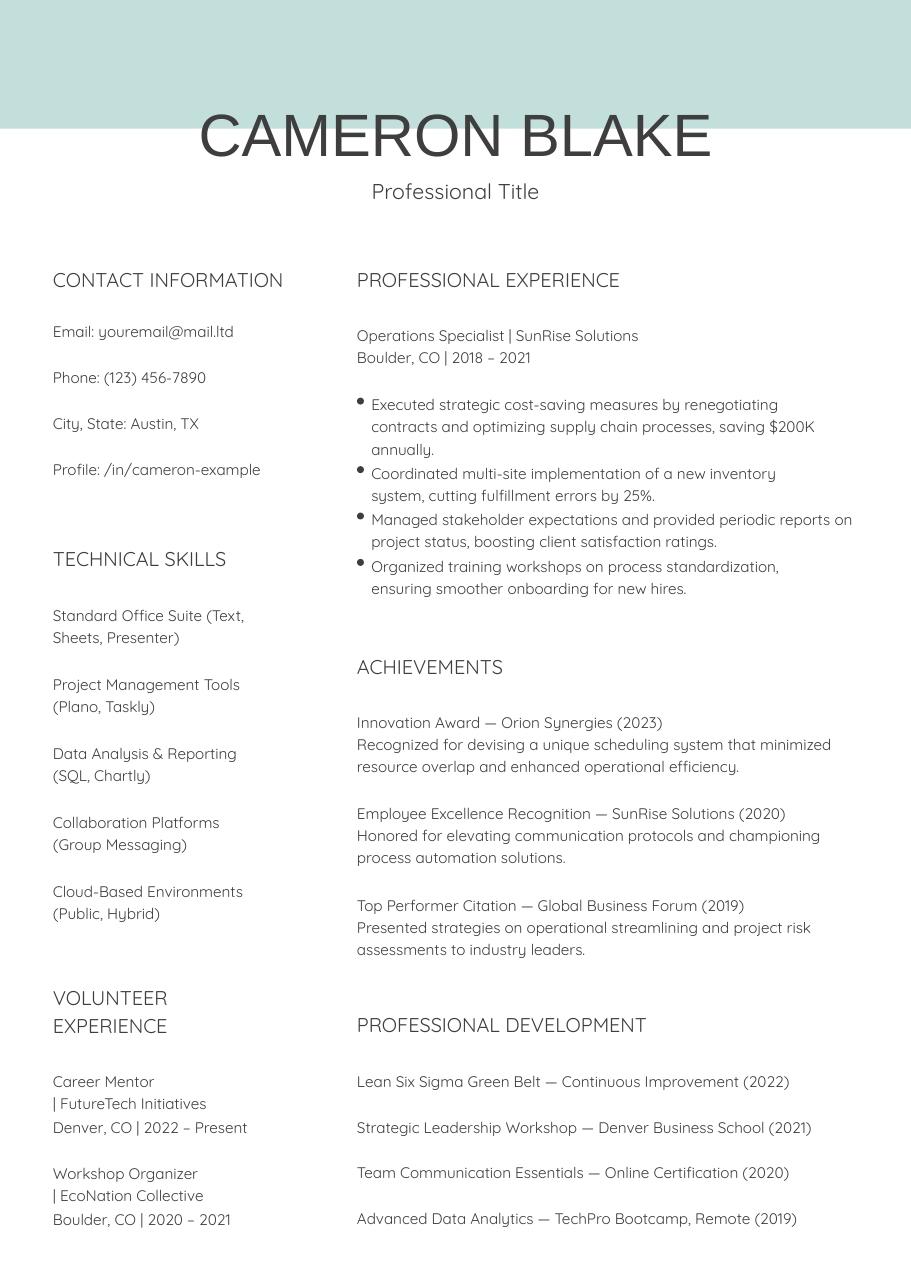
from pptx import Presentation
from pptx.dml.color import RGBColor
from pptx.enum import shapes, text
from pptx.util import Cm, Pt

COLORS = {"band": "C2DFDB", "ink": "3E3E3E"}
LEFT_X, RIGHT_X = 1.22, 8.23
LEFT_W, RIGHT_W = 6.65, 11.5
BULLET_INDENT = 0.33
LINE_H, BULLET_GAP = 0.51, 0.05

CONTACT = [
    "Email: youremail@mail.ltd",
    "Phone: (123) 456-7890",
    "City, State: Austin, TX",
    "Profile: /in/cameron-example",
]
SKILLS = [
    "Standard Office Suite (Text,\nSheets, Presenter)",
    "Project Management Tools\n(Plano, Taskly)",
    "Data Analysis & Reporting\n(SQL, Chartly)",
    "Collaboration Platforms\n(Group Messaging)",
    "Cloud-Based Environments\n(Public, Hybrid)",
]
VOLUNTEERING = [
    "Career Mentor\n| FutureTech Initiatives",
    "Denver, CO | 2022 – Present",
    "Workshop Organizer\n| EcoNation Collective",
    "Boulder, CO | 2020 – 2021",
]
DUTIES = [  # text, number of lines it takes
    ("Executed strategic cost-saving measures by renegotiating\n"
     "contracts and optimizing supply chain processes, saving $200K annually.", 3),
    ("Coordinated multi-site implementation of a new inventory\n"
     "system, cutting fulfillment errors by 25%.", 2),
    ("Managed stakeholder expectations and provided periodic reports on "
     "project status, boosting client satisfaction ratings.", 2),
    ("Organized training workshops on process standardization,\n"
     "ensuring smoother onboarding for new hires.", 2),
]
ACHIEVEMENTS = [
    "Innovation Award — Orion Synergies (2023)\n"
    "Recognized for devising a unique scheduling system that minimized "
    "resource overlap and enhanced operational efficiency.",
    "Employee Excellence Recognition — SunRise Solutions (2020)\n"
    "Honored for elevating communication protocols and championing "
    "process automation solutions.",
    "Top Performer Citation — Global Business Forum (2019)\n"
    "Presented strategies on operational streamlining and project risk "
    "assessments to industry leaders.",
]
DEVELOPMENT = [
    "Lean Six Sigma Green Belt — Continuous Improvement (2022)",
    "Strategic Leadership Workshop — Denver Business School (2021)",
    "Team Communication Essentials — Online Certification (2020)",
    "Advanced Data Analytics — TechPro Bootcamp, Remote (2019)",
]


def add_filled(parent, kind, x, y, w, h, color):
    sp = parent.add_shape(kind, Cm(x), Cm(y), Cm(w), Cm(h))
    sp.shadow.inherit = False
    sp.fill.solid()
    sp.fill.fore_color.rgb = RGBColor.from_string(COLORS[color])
    sp.line.fill.background()


def add_text(parent, content, x, y, w, h, size=10, font="Quicksand",
             spacing=None, inset=0, align=text.PP_ALIGN.LEFT):
    """Add a text box with one paragraph per line of content."""
    tf = parent.add_textbox(Cm(x), Cm(y), Cm(w), Cm(h)).text_frame
    tf.word_wrap = True
    tf.auto_size = text.MSO_AUTO_SIZE.SHAPE_TO_FIT_TEXT
    tf.margin_left = tf.margin_right = Cm(inset)
    tf.margin_top = tf.margin_bottom = Cm(inset)
    tf.text = content
    for p in tf.paragraphs:
        p.alignment = align
        p.line_spacing = spacing
        p.font.size = Pt(size)
        p.font.name = font
        p.font.color.rgb = RGBColor.from_string(COLORS["ink"])


def add_title(parent, content, y, h, size, font):
    add_text(parent, content, 2.29, y, 16.43, h, size, font,
             inset=0.25, align=text.PP_ALIGN.CENTER)


def add_heading(parent, content, x, y, w, h=0.56, spacing=None):
    add_text(parent, content, x, y, w, h, size=13, spacing=spacing)


def add_entries(parent, entries, x, y, w, h, step, spacing=1.2):
    """Stack entries at an equal vertical step."""
    for i, entry in enumerate(entries):
        add_text(parent, entry, x, y + i * step, w, h, spacing=spacing)


def add_bullets(parent, items, x, y, w):
    """Stack groups of a dot and its text, spaced by their line counts."""
    for content, lines in items:
        h = lines * LINE_H
        group = parent.add_group_shape().shapes
        add_text(group, content, x + BULLET_INDENT, y, w - BULLET_INDENT, h,
                 spacing=1.2)
        add_filled(group, shapes.MSO_SHAPE.OVAL, x, y + 0.13, 0.16, 0.16, "ink")
        y += h + BULLET_GAP


def add_left_column(parent):
    add_heading(parent, "CONTACT INFORMATION", LEFT_X, 6.17, LEFT_W)
    add_entries(parent, CONTACT, LEFT_X, 7.44, LEFT_W, 0.43, 1.06, spacing=None)
    add_heading(parent, "TECHNICAL SKILLS", LEFT_X, 12.6, LEFT_W)
    add_entries(parent, SKILLS, LEFT_X, 13.89, LEFT_W, 0.94, 1.59)
    add_heading(parent, "VOLUNTEER\nEXPERIENCE", LEFT_X, 22.61, LEFT_W, 1.22, 1.2)
    add_entries(parent, VOLUNTEERING, LEFT_X, 24.64, LEFT_W, 0.43, 1.06)


def add_right_column(parent):
    add_heading(parent, "PROFESSIONAL EXPERIENCE", RIGHT_X, 6.17, 8.59)
    job = "Operations Specialist | SunRise Solutions\nBoulder, CO | 2018 – 2021"
    add_text(parent, job, RIGHT_X, 7.44, RIGHT_W, 0.94, spacing=1.2)
    add_bullets(parent, DUTIES, RIGHT_X, 9.04, RIGHT_W)
    add_heading(parent, "ACHIEVEMENTS", RIGHT_X, 15.09, 8.59)
    add_entries(parent, ACHIEVEMENTS, RIGHT_X, 16.36, RIGHT_W, 1.45, 2.11)
    add_heading(parent, "PROFESSIONAL DEVELOPMENT", RIGHT_X, 23.34, 8.59)
    add_entries(parent, DEVELOPMENT, RIGHT_X, 24.64, RIGHT_W, 0.43, 1.05)


def main():
    prs = Presentation()
    prs.slide_width, prs.slide_height = Cm(21), Cm(29.7)
    s = prs.slides.add_slide(prs.slide_layouts[6])
    add_filled(s.shapes, shapes.MSO_SHAPE.RECTANGLE, 0, 0, 21, 2.97, "band")
    add_title(s.shapes, "CAMERON BLAKE", 1.98, 2.18, 39, "Arial")
    add_title(s.shapes, "Professional Title", 3.86, 1.12, 14, "Quicksand")
    add_left_column(s.shapes)
    add_right_column(s.shapes)
    prs.save("out.pptx")


if __name__ == "__main__":
    main()
